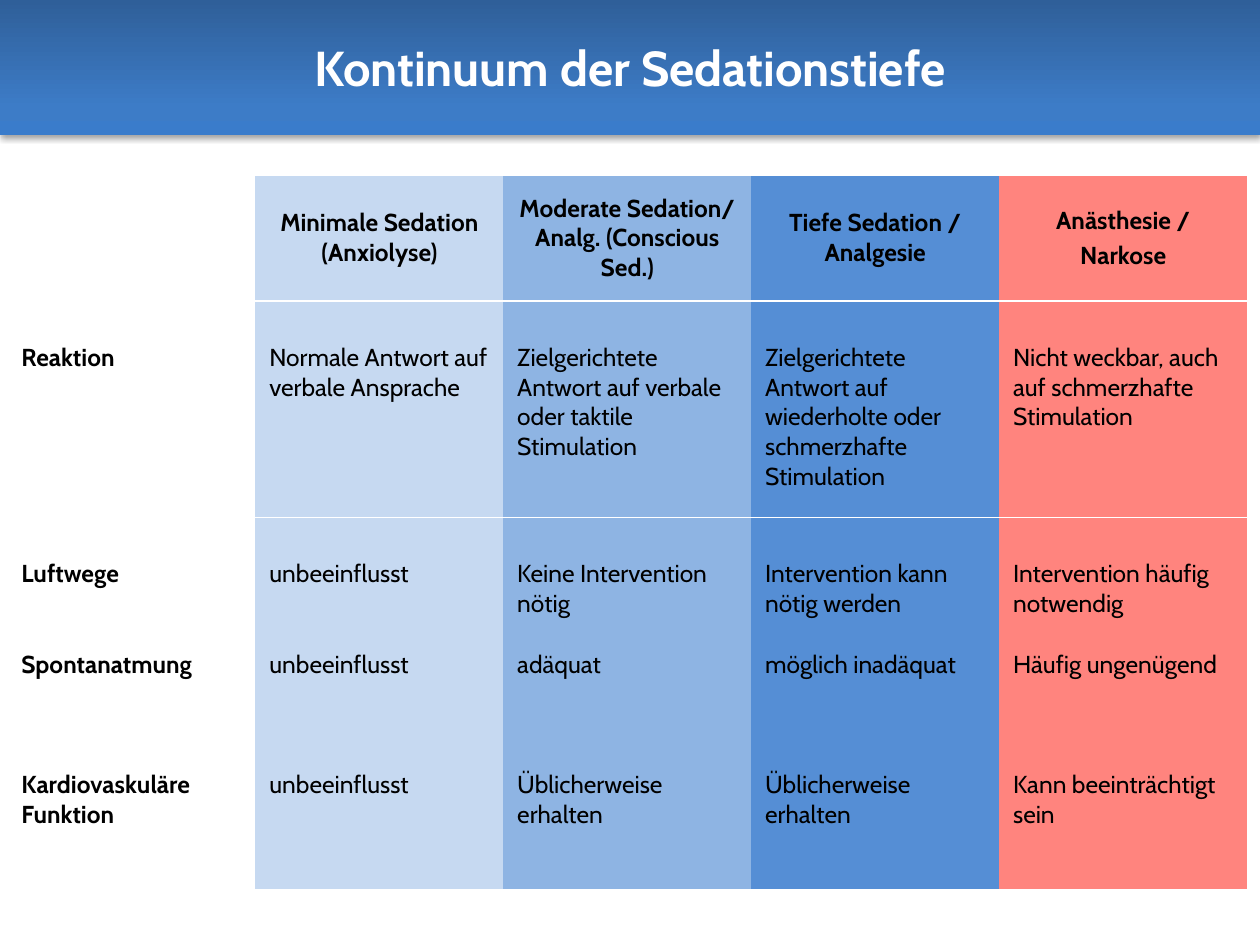
from dataclasses import dataclass

from lxml.etree import SubElement
from pptx import Presentation
from pptx.dml.color import RGBColor
from pptx.enum.shapes import MSO_SHAPE
from pptx.enum.text import MSO_ANCHOR, PP_ALIGN
from pptx.oxml.ns import qn
from pptx.util import Inches, Pt


@dataclass(frozen=True)
class Theme:
    """Colours and type sizes of the deck."""
    font: str = "Cabin"
    title_size: int = 28
    table_size: int = 14
    spacing: float = 2.8
    text: str = "000000"
    light: str = "FFFFFF"
    shadow: str = "000000"
    banner: tuple = ((0, "2F5F99"), (80, "3D7CC7"), (100, "3A7CCB"))
    columns: tuple = (None, "C6D9F1", "8EB4E3", "558ED5", "FF847E")


THEME = Theme()
NO_TABLE_STYLE = "{2D5ABB26-0587-4C30-8999-92F81FD0307C}"
ROW_HEIGHTS = (1, 1.72, 1, 0.96, 1)
TOP_MARGINS = (0.05, 0.33, 0.33, 0.05, 0.05)
ROWS = (
    ("", "Minimale Sedation (Anxiolyse)",
     "Moderate Sedation/ Analg. (Conscious Sed.)",
     "Tiefe Sedation / Analgesie", "Anästhesie /\nNarkose"),
    ("Reaktion", "Normale Antwort auf verbale Ansprache",
     "Zielgerichtete Antwort auf verbale oder taktile Stimulation",
     "Zielgerichtete Antwort auf wiederholte oder schmerzhafte Stimulation",
     "Nicht weckbar, auch auf schmerzhafte Stimulation"),
    ("Luftwege", "unbeeinflusst", "Keine Intervention nötig",
     "Intervention kann nötig werden", "Intervention häufig notwendig"),
    ("Spontanatmung", "unbeeinflusst", "adäquat", "möglich inadäquat",
     "Häufig ungenügend"),
    ("Kardiovaskuläre Funktion", "unbeeinflusst", "Üblicherweise erhalten",
     "Üblicherweise erhalten", "Kann beeinträchtigt sein"),
)


def style_paragraph(para, size, color, bold, align):
    """Set the font and alignment of one paragraph."""
    para.alignment = align
    para.font.name = THEME.font
    para.font.size = Pt(size)
    para.font.bold = bold
    para.font.color.rgb = RGBColor.from_string(color)


def add_color(parent, color):
    """Append an RGB colour element and return it."""
    return SubElement(parent, qn("a:srgbClr"), val=color)


def add_banner(page, left, top, width, height, title):
    """Draw the title banner with its gradient and soft shadow."""
    banner = page.shapes.add_shape(MSO_SHAPE.RECTANGLE, left, top, width, height)
    banner.line.fill.background()
    banner.shadow.inherit = False
    banner.fill.gradient()
    banner.fill.gradient_angle = 270
    properties = banner.element.spPr
    stops = properties.find(qn("a:gradFill")).find(qn("a:gsLst"))
    for stop in list(stops):
        stops.remove(stop)
    for position, color in THEME.banner:
        add_color(SubElement(stops, qn("a:gs"), pos=str(position * 1000)), color)
    shadow = SubElement(properties.find(qn("a:effectLst")), qn("a:outerShdw"),
                        blurRad=str(Pt(3.1)), dist=str(Pt(1.8)),
                        dir="5400000", rotWithShape="0")
    SubElement(add_color(shadow, THEME.shadow), qn("a:alpha"), val="35000")
    frame = banner.text_frame
    frame.word_wrap = False
    frame.vertical_anchor = MSO_ANCHOR.MIDDLE
    frame.text = title
    style_paragraph(frame.paragraphs[0], THEME.title_size, THEME.light, True,
                    PP_ALIGN.CENTER)


def add_border(cell, side):
    """Draw a thin light border on one side of a cell."""
    line = SubElement(cell._tc.get_or_add_tcPr(), qn(f"a:ln{side}"), w=str(Pt(1)))
    add_color(SubElement(line, qn("a:solidFill")), THEME.light)


def fill_cell(cell, text, row, column):
    """Write, style and colour one cell of the table."""
    header = row == 0
    if row <= 1:
        add_border(cell, "T")
    if header or row == len(ROWS) - 1:
        add_border(cell, "B")
    if THEME.columns[column]:
        cell.fill.solid()
        cell.fill.fore_color.rgb = RGBColor.from_string(THEME.columns[column])
    else:
        cell.fill.background()
    cell.margin_left = cell.margin_right = Inches(0.11)
    cell.margin_top = Inches(TOP_MARGINS[row])
    cell.margin_bottom = Inches(0.05)
    cell.vertical_anchor = MSO_ANCHOR.MIDDLE if header else MSO_ANCHOR.TOP
    cell.text_frame.text = text
    for para in cell.text_frame.paragraphs:
        style_paragraph(para, THEME.table_size, THEME.text, header or column == 0,
                        PP_ALIGN.CENTER if header else PP_ALIGN.LEFT)
        para.space_before = Pt(THEME.spacing)


def add_sedation_table(page, left, top, width, height):
    """Place the table of sedation levels in the given box."""
    count = len(THEME.columns)
    frame = page.shapes.add_table(len(ROWS), count, left, top, width, height)
    table = frame.table
    table.first_row = table.horz_banding = False
    table._tbl.tblPr.find(qn("a:tableStyleId")).text = NO_TABLE_STYLE
    for column in table.columns:
        column.width = width // count
    for row, texts in enumerate(ROWS):
        table.rows[row].height = int(height * ROW_HEIGHTS[row] / sum(ROW_HEIGHTS))
        for column, text in enumerate(texts):
            fill_cell(table.cell(row, column), text, row, column)


def main():
    """Build the deck and save it."""
    deck = Presentation()
    deck.slide_width, deck.slide_height = Inches(10), Inches(7.5)
    page = deck.slides.add_slide(deck.slide_layouts[6])
    add_sedation_table(page, Inches(0.06), Inches(1.39), Inches(9.84), Inches(5.67))
    add_banner(page, 0, 0, deck.slide_width, Inches(1.07),
               "Kontinuum der Sedationstiefe")
    deck.save("out.pptx")


if __name__ == "__main__":
    main()
